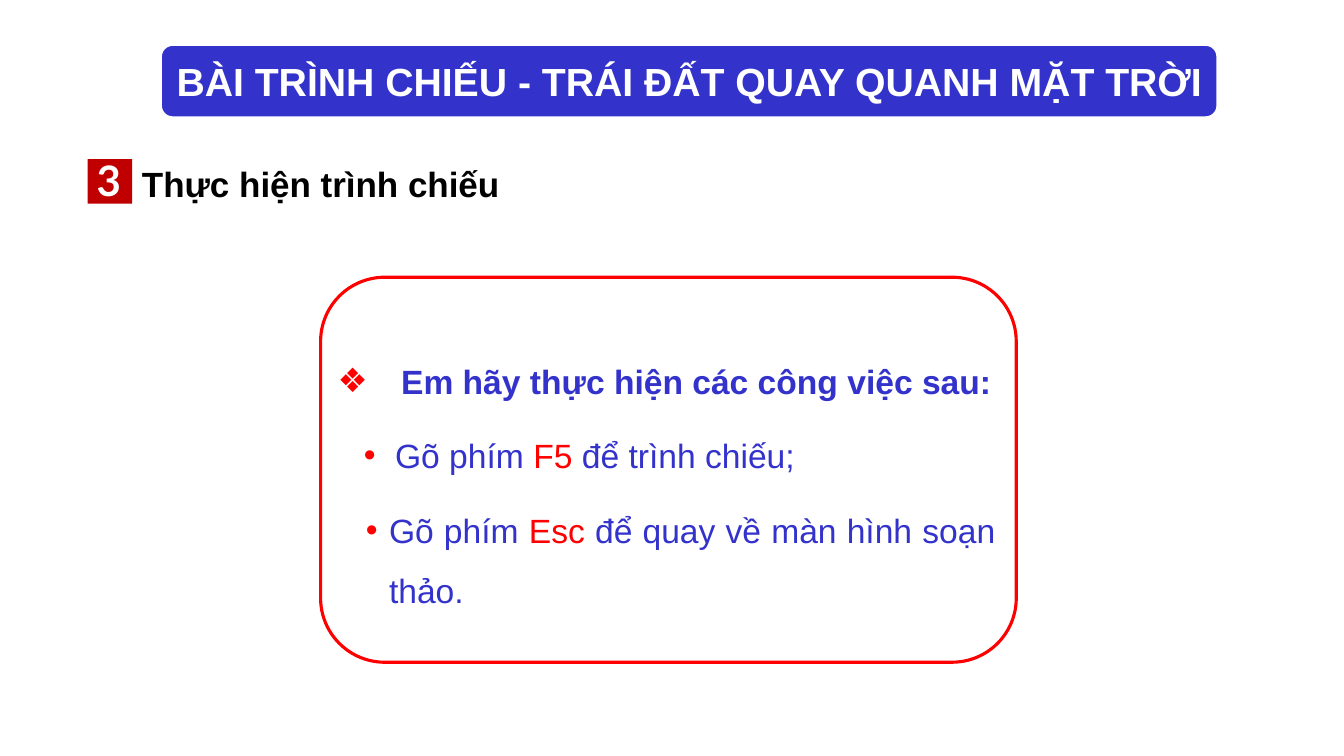
from lxml import etree
from pptx import Presentation
from pptx.dml.color import RGBColor
from pptx.enum import shapes, text
from pptx.oxml.ns import qn
from pptx.util import Inches, Pt

WHITE = RGBColor(0xFF, 0xFF, 0xFF)
BLACK = RGBColor(0, 0, 0)
BLUE = RGBColor(0x33, 0x33, 0xCC)
RED = RGBColor(0xFF, 0, 0)
DARK = RGBColor(0xC0, 0, 0)

# bullet, left margin, hanging indent, bold, runs
TASKS = [
    ("❖", 0.63, 0.63, True, [("Em hãy thực hiện các công việc sau:", BLUE)]),
    ("•", 0.57, 0.31, False,
     [("Gõ phím ", BLUE), ("F5 ", RED), ("để trình chiếu;", BLUE)]),
    ("•", 0.51, 0.23, False,
     [("Gõ phím ", BLUE), ("Esc ", RED),
      ("để quay về màn hình soạn thảo.", BLUE)]),
]


def add_run(para, words, size, color, bold=True, name="Arial"):
    run = para.add_run()
    run.text = words
    style = {"size": Pt(size), "bold": bold, "name": name}
    for key, value in style.items():
        setattr(run.font, key, value)
    run.font.color.rgb = color


def add_box(slide, kind, area, fill=None, line=None):
    box = slide.shapes.add_shape(kind, *map(Inches, area))
    box.shadow.inherit = False
    if fill is None:
        box.fill.background()
    else:
        box.fill.solid()
        box.fill.fore_color.rgb = fill
    if line is None:
        box.line.fill.background()
    else:
        box.line.color.rgb = line
        box.line.width = Pt(2.25)
    return box


def add_label(slide, area, words, size, color, name="Arial"):
    frame = slide.shapes.add_textbox(*map(Inches, area)).text_frame
    frame.word_wrap = False
    add_run(frame.paragraphs[0], words, size, color, name=name)


def set_bullet(para, mark, left, hang):
    props = para._p.get_or_add_pPr()
    props.set("marL", str(Inches(left)))
    props.set("indent", str(-Inches(hang)))
    tint = etree.SubElement(props, qn("a:buClr"))
    etree.SubElement(tint, qn("a:srgbClr"), val=str(RED))
    etree.SubElement(props, qn("a:buFont"), typeface="Arial")
    etree.SubElement(props, qn("a:buChar"), char=mark)


def add_tasks(slide, area):
    frame = slide.shapes.add_textbox(*map(Inches, area)).text_frame
    frame.word_wrap = True
    style = {"alignment": text.PP_ALIGN.JUSTIFY, "line_spacing": 1.5,
             "space_after": Pt(10)}
    for num, (mark, left, hang, bold, runs) in enumerate(TASKS):
        para = frame.add_paragraph() if num else frame.paragraphs[0]
        set_bullet(para, mark, left, hang)
        for key, value in style.items():
            setattr(para, key, value)
        for words, color in runs:
            add_run(para, words, 24, color, bold)


def main():
    deck = Presentation()
    deck.slide_width, deck.slide_height = Inches(13.33), Inches(7.5)
    slide = deck.slides.add_slide(deck.slide_layouts[6])
    kinds = shapes.MSO_SHAPE

    # Numbered heading
    add_box(slide, kinds.RECTANGLE, (0.87, 1.58, 0.44, 0.44), DARK)
    add_label(slide, (0.86, 1.48, 0.47, 0.61), "3", 30, WHITE, "Lato")
    add_label(slide, (1.31, 1.56, 3.79, 0.52), "Thực hiện trình chiếu",
              25, BLACK)

    # Title banner
    banner = add_box(slide, kinds.ROUNDED_RECTANGLE,
                     (1.59, 0.44, 10.49, 0.73), BLUE, WHITE)
    frame = banner.text_frame
    frame.word_wrap = False
    frame.vertical_anchor = text.MSO_ANCHOR.MIDDLE
    para = frame.paragraphs[0]
    para.alignment = text.PP_ALIGN.CENTER
    add_run(para, "BÀI TRÌNH CHIẾU - TRÁI ĐẤT QUAY QUANH MẶT TRỜI", 28, WHITE)

    # Task panel
    add_box(slide, kinds.ROUNDED_RECTANGLE, (3.18, 2.75, 6.9, 3.82), line=RED)
    add_tasks(slide, (3.25, 3.33, 6.72, 2.8))

    deck.save("out.pptx")


if __name__ == "__main__":
    main()
